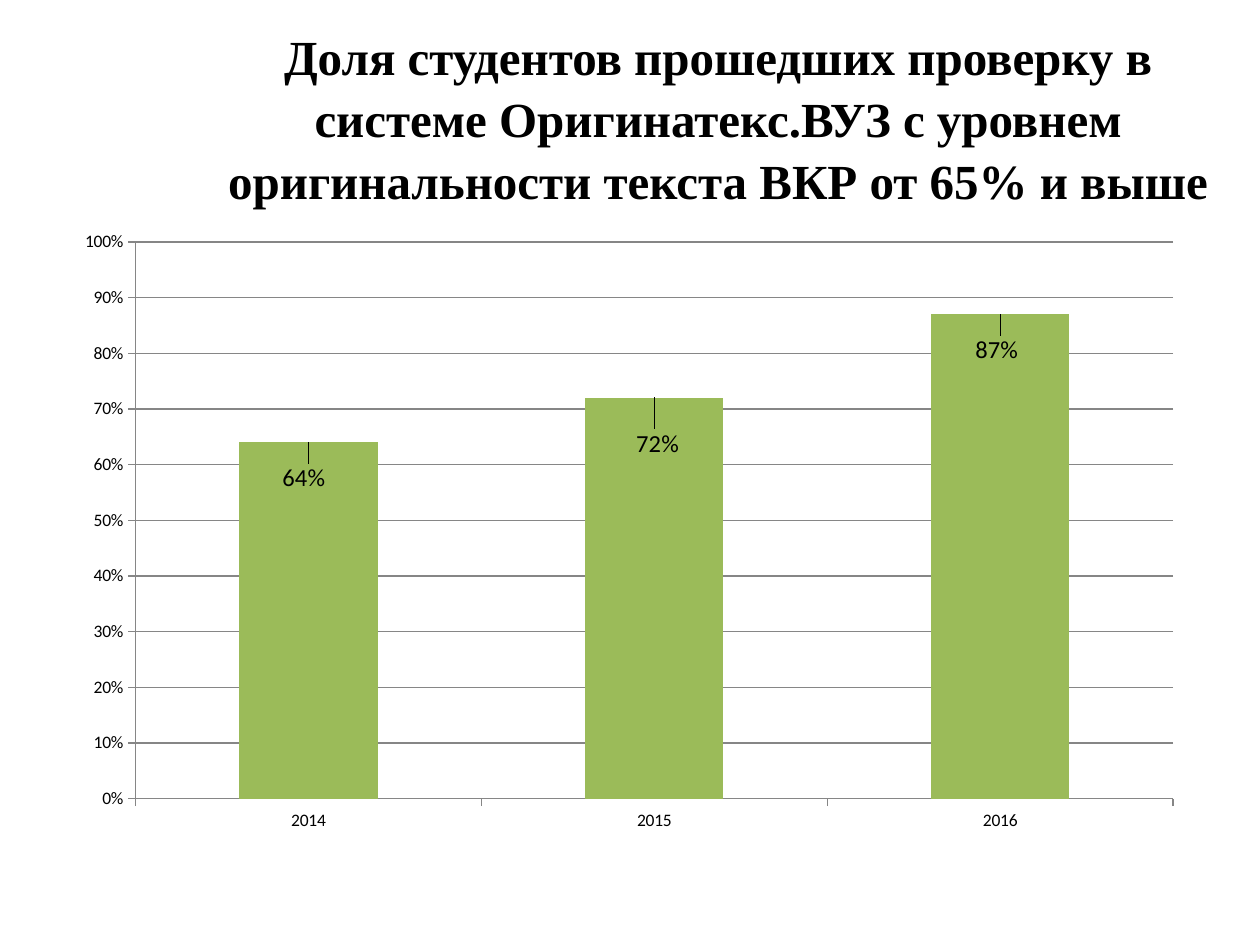
"""Build a slide with a column chart of yearly originality-check results."""
from dataclasses import dataclass

import lxml.etree
import pptx
import pptx.chart.data
import pptx.dml.color
import pptx.enum.chart
import pptx.enum.text
import pptx.oxml
import pptx.oxml.ns
import pptx.util

Cm = pptx.util.Cm
Pt = pptx.util.Pt
qn = pptx.oxml.ns.qn

TITLE = ("Доля студентов прошедших проверку в системе Оригинатекс.ВУЗ "
         "с уровнем оригинальности текста ВКР от 65% и выше")


@dataclass
class Column:
    year: str
    share: float
    label_dx: float
    label_dy: float


COLUMNS = [
    Column("2014", 0.64, -0.004, 0.09),
    Column("2015", 0.72, 0.003, 0.106),
    Column("2016", 0.87, -0.003, 0.09),
]


def rgb(value: str) -> pptx.dml.color.RGBColor:
    return pptx.dml.color.RGBColor.from_string(value)


def set_font(font, size: float, name: str, bold: bool = False) -> None:
    font.size, font.name, font.bold = Pt(size), name, bold
    font.color.rgb = rgb("000000")


def manual_layout(**settings):
    layout = pptx.oxml.parse_xml(
        f'<c:layout xmlns:c="{pptx.oxml.ns.nsdecls("c").split(chr(34))[1]}"/>')
    manual = lxml.etree.SubElement(layout, qn("c:manualLayout"))
    for tag, value in settings.items():
        lxml.etree.SubElement(manual, qn(f"c:{tag}")).set("val", str(value))
    return layout


def add_title(s) -> None:
    sp = s.shapes.title
    sp.left, sp.top, sp.width, sp.height = Cm(3.96), Cm(0.76), Cm(21.03), Cm(3.18)
    tf = sp.text_frame
    tf.text = TITLE
    tf.word_wrap = True
    tf.auto_size = pptx.enum.text.MSO_AUTO_SIZE.NONE
    tf.vertical_anchor = pptx.enum.text.MSO_ANCHOR.MIDDLE
    p = tf.paragraphs[0]
    p.alignment = pptx.enum.text.PP_ALIGN.CENTER
    p.line_spacing = 1.05
    set_font(p.font, 28, "Times New Roman", True)


def format_axes(chart) -> None:
    val, cat = chart.value_axis, chart.category_axis
    val.minimum_scale, val.maximum_scale, val.major_unit = 0, 1, 0.1
    val.tick_labels.number_format = "0%"
    val.tick_labels.number_format_is_linked = False
    val.has_major_gridlines = True
    for line in (val.format.line, cat.format.line, val.major_gridlines.format.line):
        line.color.rgb = rgb("868686")
        line.width = Pt(0.75)
    for axis in (val, cat):
        axis.major_tick_mark = pptx.enum.chart.XL_TICK_MARK.OUTSIDE
        axis.minor_tick_mark = pptx.enum.chart.XL_TICK_MARK.NONE


def add_labels(series) -> None:
    outside = pptx.enum.chart.XL_LABEL_POSITION.OUTSIDE_END
    labels = series.data_labels
    labels.show_value = True
    labels.number_format, labels.number_format_is_linked = "0%", False
    set_font(labels.font, 14, "Calibri")
    for i, _ in enumerate(COLUMNS):
        label = series.points[i].data_label
        set_font(label.font, 14, "Calibri")
        label.position = outside
    for column, label in zip(COLUMNS, labels._element.findall(qn("c:dLbl"))):
        label.insert(1, manual_layout(x=column.label_dx, y=column.label_dy))


def add_column_chart(s) -> None:
    data = pptx.chart.data.CategoryChartData(number_format="0%")
    data.categories = [column.year for column in COLUMNS]
    data.add_series("Series 1", [column.share for column in COLUMNS])
    chart = s.shapes.add_chart(
        pptx.enum.chart.XL_CHART_TYPE.COLUMN_CLUSTERED,
        Cm(1.27), Cm(4.45), Cm(22.86), Cm(12.57), data).chart
    chart.has_legend = chart.has_title = False
    set_font(chart.font, 10, "Calibri")
    format_axes(chart)
    plot = chart.plots[0]
    plot.gap_width, plot.vary_by_categories = 150, False
    series = plot.series[0]
    series.format.fill.solid()
    series.format.fill.fore_color.rgb = rgb("9BBB59")
    add_labels(series)
    area = plot._element.getparent()
    for layout in area.findall(qn("c:layout")):
        area.remove(layout)
    area.insert(0, manual_layout(layoutTarget="inner", xMode="edge", yMode="edge",
                                 x=0.064, y=0.034, w=0.915, h=0.893))


def main() -> None:
    prs = pptx.Presentation()
    prs.slide_width, prs.slide_height = Cm(25.4), Cm(19.05)
    s = prs.slides.add_slide(prs.slide_layouts[5])
    add_title(s)
    add_column_chart(s)
    prs.save("out.pptx")


if __name__ == "__main__":
    main()
